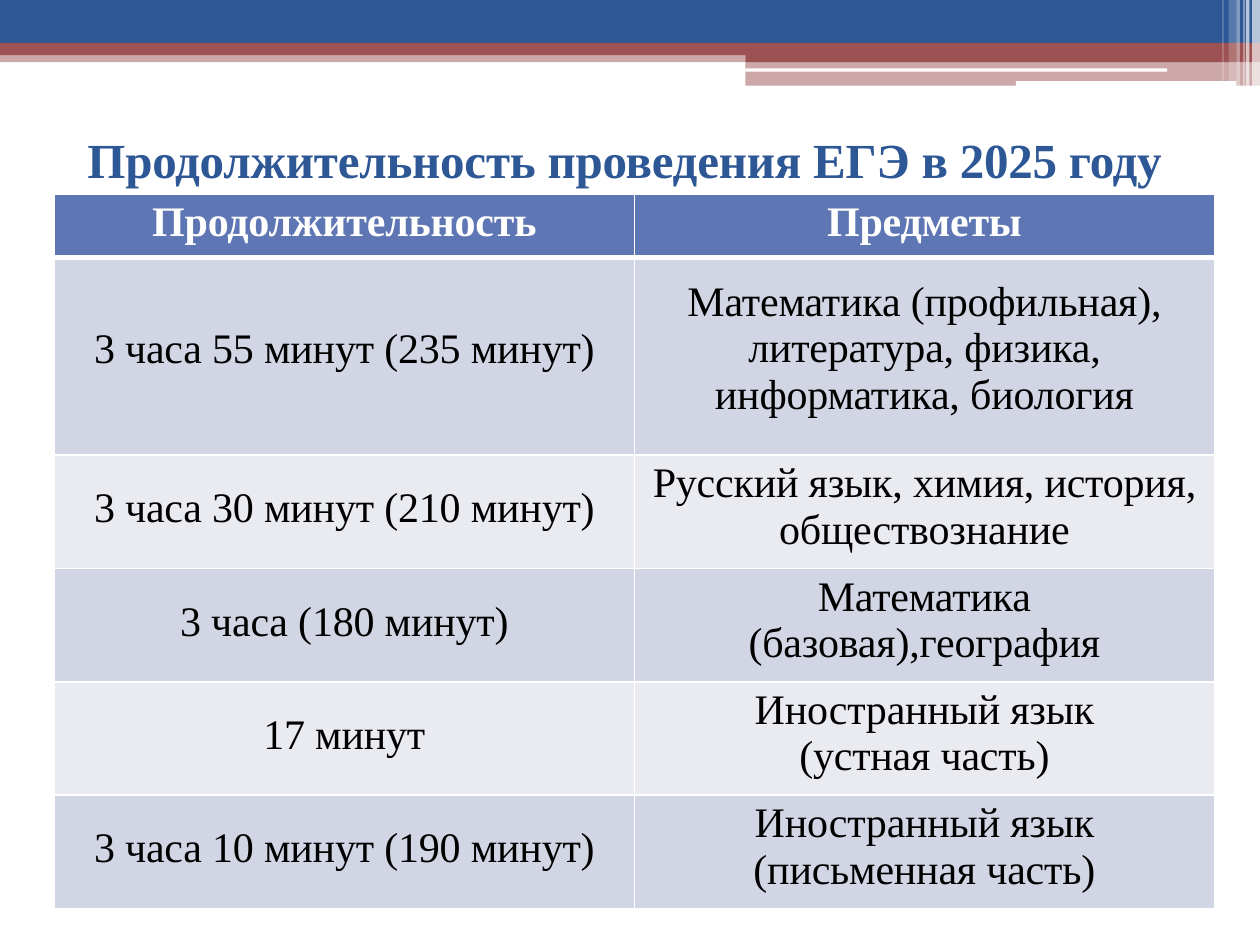
from dataclasses import dataclass

from lxml import etree
from pptx import Presentation
from pptx.dml.color import RGBColor
from pptx.enum import text
from pptx.oxml.ns import qn
from pptx.util import Pt


@dataclass(frozen=True)
class Theme:
    font: str = "Times New Roman"
    blue: str = "2E5796"
    red: str = "9C5252"
    white: str = "FFFFFF"
    black: str = "000000"
    head: str = "5F76B4"
    bands: tuple = ("D2D5E4", "EAEBF1")
    title: float = 28
    body: float = 24


def box(left, top, right, bottom):
    return [(left, top), (right, top), (right, bottom), (left, bottom)]


class Deck:
    def __init__(self, theme):
        self.theme = theme
        self.prs = Presentation()
        self.prs.slide_width, self.prs.slide_height = Pt(720), Pt(540)
        self.slide = self.prs.slides.add_slide(self.prs.slide_layouts[6])

    def form(self, color, alpha, *rings):
        """Draw closed outlines as one filled shape; alpha is in percent."""
        rings = [[(Pt(x), Pt(y)) for x, y in ring] for ring in rings]
        pen = self.slide.shapes.build_freeform(*rings[0][0])
        for i, ring in enumerate(rings):
            if i:
                pen.move_to(*ring[0])
            pen.add_line_segments(ring[1:], close=True)
        shape = pen.convert_to_shape()
        shape.shadow.inherit = False
        shape.line.fill.background()
        shape.fill.solid()
        shape.fill.fore_color.rgb = RGBColor.from_string(color)
        if alpha < 100:
            tone = shape.element.spPr.find(".//" + qn("a:srgbClr"))
            etree.SubElement(tone, qn("a:alpha"), val=str(alpha * 1000))

    def label(self, frame, words, size, color, bold, align):
        frame.text = words
        frame.word_wrap = True
        for para in frame.paragraphs:
            para.alignment = align
            font = para.font
            font.name, font.size, font.bold = self.theme.font, Pt(size), bold
            font.color.rgb = RGBColor.from_string(color)
            for run in para.runs:
                run.font._element.set("spc", "-10")

    def title(self, words, left, top, width, height):
        frame = self.slide.shapes.add_textbox(
            Pt(left), Pt(top), Pt(width), Pt(height)).text_frame
        frame.margin_left = frame.margin_right = frame.margin_bottom = 0
        frame.margin_top = Pt(1)
        self.label(frame, words, self.theme.title, self.theme.blue, True,
                   text.PP_ALIGN.LEFT)

    def edge(self, cell, **widths):
        """Put white borders on a cell, given in the order L, R, T, B."""
        props = cell._tc.get_or_add_tcPr()
        for i, (side, width) in enumerate(widths.items()):
            line = etree.Element(qn("a:ln" + side), w=str(Pt(width)))
            fill = etree.SubElement(line, qn("a:solidFill"))
            etree.SubElement(fill, qn("a:srgbClr"), val=self.theme.white)
            props.insert(i, line)

    def cell(self, cell, words, row, top, side):
        theme, head = self.theme, row == 0
        cell.margin_left = cell.margin_right = Pt(side)
        cell.margin_top, cell.margin_bottom = Pt(top), 0
        cell.fill.solid()
        cell.fill.fore_color.rgb = RGBColor.from_string(
            theme.head if head else theme.bands[(row - 1) % 2])
        self.label(cell.text_frame, words, theme.body,
                   theme.white if head else theme.black, head,
                   text.PP_ALIGN.CENTER)
        self.edge(cell, L=1, R=1, T=3 if row == 1 else 1, B=3 if head else 1)

    def table(self, rows, left, top, width, highs):
        """Each row holds two texts, their top insets and the right cell's side inset."""
        grid = self.slide.shapes.add_table(
            len(rows), 2, Pt(left), Pt(top), Pt(width), Pt(sum(highs))).table
        for col in grid.columns:
            col.width = Pt(width / 2)
        for i, (time, names, drop, rise, side) in enumerate(rows):
            grid.rows[i].height = Pt(highs[i])
            self.cell(grid.cell(i, 0), time, i, drop, 0)
            self.cell(grid.cell(i, 1), names, i, rise, side)

    def banner(self):
        red, white = self.theme.red, self.theme.white
        step, low = 426, 49
        self.form(red, 50, box(0, 31.5, step, 35.5))
        self.form(self.theme.blue, 100, box(0, 0, 720, 24.5))
        self.form(red, 100, [(720, 24.5), (0, 24.5), (0, 31.5), (step, 31.5),
                             (step, 35.5), (720, 35.5)])
        self.form(red, 50, box(step, 34.5, 720, low))
        self.form(white, 100, box(step, 39, 667, 41), box(580.5, 46.3, 706.5, low))
        self.form(white, 65, box(712, 0, 714, low), box(715.5, 0, 720, low))
        for alpha, left, right, foot in ((60, 710.5, 711.3, low), (40, 706.5, 708.5, low),
                                         (20, 702, 706.5, 46.3), (30, 698.5, 699.3, 46.3)):
            self.form(white, alpha, box(left, 0, right, foot))


ROWS = [
    ("Продолжительность", "Предметы", 3, 3, 0),
    ("3 часа 55 минут (235 минут)",
     "Математика (профильная), литература, физика, информатика, биология", 39.5, 12.3, 18),
    ("3 часа 30 минут (210 минут)",
     "Русский язык, химия, история, обществознание", 17.3, 3, 0),
    ("3 часа (180 минут)", "Математика\n(базовая),география", 17.3, 3, 0),
    ("17 минут", "Иностранный язык (устная часть)", 17.3, 3, 45),
    ("3 часа 10 минут (190 минут)", "Иностранный язык (письменная часть)", 17.3, 3, 45),
]


def main():
    deck = Deck(Theme())
    deck.banner()
    deck.title("Продолжительность проведения ЕГЭ в 2025 году", 50, 73, 621, 35)
    deck.table(ROWS, 31, 111, 663, [36, 113] + [64.8] * 4)
    deck.prs.save("out.pptx")


if __name__ == "__main__":
    main()
